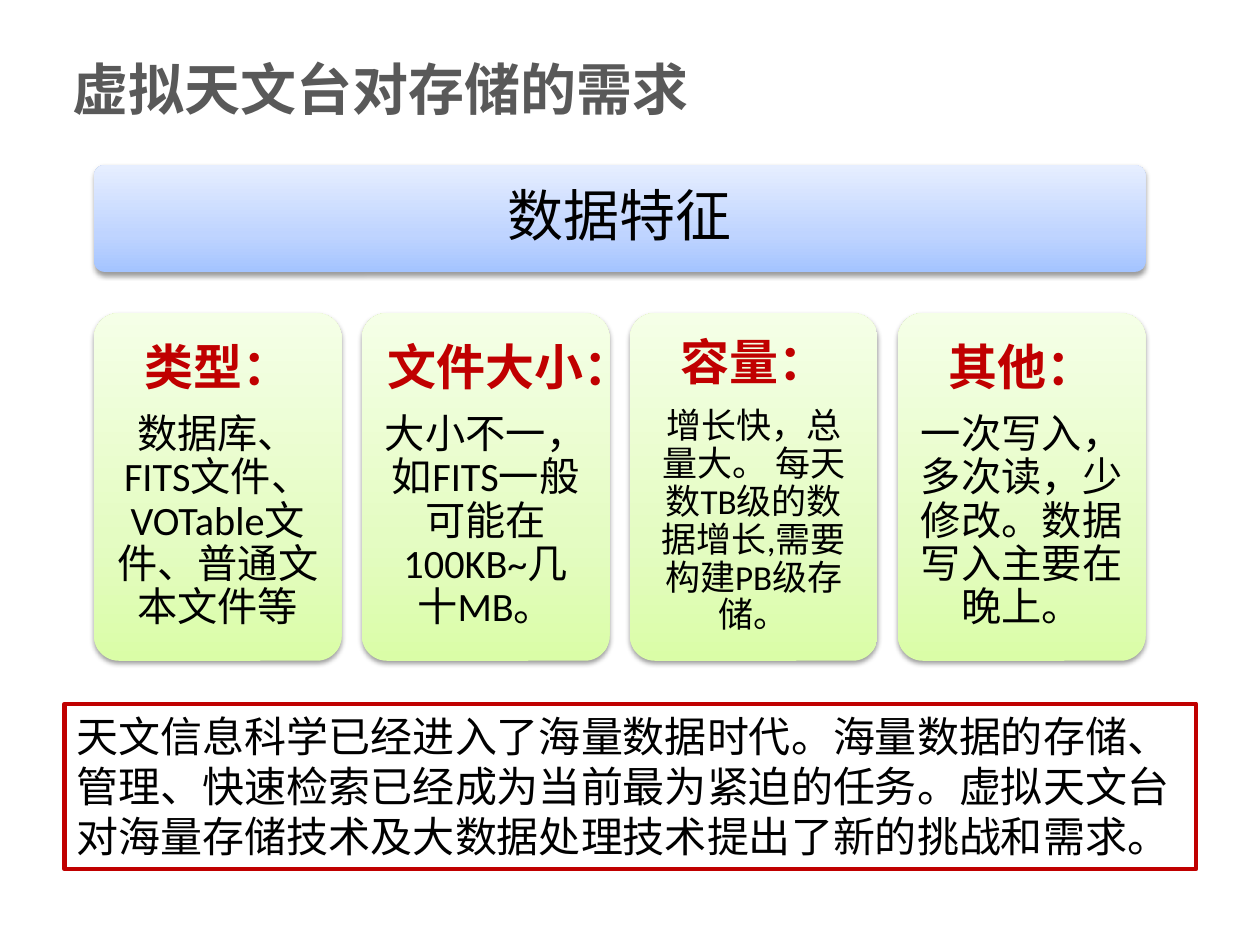
from copy import deepcopy

from lxml import etree
from pptx import Presentation
from pptx.dml.color import RGBColor
from pptx.enum.shapes import MSO_SHAPE
from pptx.enum.text import MSO_ANCHOR, MSO_AUTO_SIZE, PP_ALIGN
from pptx.oxml.ns import qn
from pptx.util import Pt

ROUNDED, RECTANGLE = MSO_SHAPE.ROUNDED_RECTANGLE, MSO_SHAPE.RECTANGLE
MIDDLE, TOP = MSO_ANCHOR.MIDDLE, MSO_ANCHOR.TOP
CENTER, LEFT = PP_ALIGN.CENTER, PP_ALIGN.LEFT
FIXED = MSO_AUTO_SIZE.NONE
TITLE_ONLY = 5

BLUE = ("A4C4FF", "BFD4FF", "E6EEFF")
GREEN = ("DAFDA7", "E4FCC2", "F5FFE7")
RED, BLACK, GRAY = "C00000", "000000", "595959"

FEATURES = [
    ("类型：", "数据库、FITS文件、VOTable文件、普通文本文件等", 23),
    ("文件大小：", "大小不一，如FITS一般可能在100KB~几十MB。", 23),
    ("容量：", "增长快，总量大。 每天数TB级的数据增长,需要构建PB级存储。", 20),
    ("其他：", "一次写入，多次读，少修改。数据写入主要在晚上。", 23),
]
CONCLUSION = (
    "天文信息科学已经进入了海量数据时代。海量数据的存储、管理、快速检索已经成为当前最为紧迫的任务。"
    "虚拟天文台对海量存储技术及大数据处理技术提出了新的挑战和需求。"
)


def color(code):
    return RGBColor.from_string(code)


def assign(target, values):
    for name, value in values.items():
        setattr(target, name, value)


class StorageSlide:
    """Holds the text style and the slide, and draws each kind of element."""

    font = "Calibri"

    def __init__(self, deck):
        self.slide = deck.slides.add_slide(deck.slide_layouts[TITLE_ONLY])

    def add_text(self, paragraph, text, size, shade, bold=False, font=None):
        run = paragraph.add_run()
        run.text = text
        assign(run.font, {"size": Pt(size), "bold": bold, "name": font or self.font})
        run.font.color.rgb = color(shade)

    def title(self, text, left, top, width, height):
        heading = self.slide.shapes.title
        assign(heading, {"left": Pt(left), "top": Pt(top),
                         "width": Pt(width), "height": Pt(height)})
        frame = heading.text_frame
        assign(frame, {"auto_size": FIXED, "word_wrap": True, "vertical_anchor": MIDDLE})
        frame.paragraphs[0].alignment = LEFT
        self.add_text(frame.paragraphs[0], text, 32, GRAY, True, "Noto Sans CJK SC")

    def shape(self, kind, left, top, width, height):
        box = self.slide.shapes.add_shape(kind, Pt(left), Pt(top), Pt(width), Pt(height))
        box.shadow.inherit = False
        box.text_frame.word_wrap = True
        return box

    def gradient(self, box, shades):
        box.fill.gradient()
        box.fill.gradient_angle = 90
        stops = box.element.spPr.find(".//" + qn("a:gsLst"))
        stops.insert(1, deepcopy(stops[0]))
        for stop, shade, position in zip(box.fill.gradient_stops, shades, (0, 0.35, 1)):
            stop.color.rgb = color(shade)
            stop.position = position

    def shadow(self, box):
        effects = box.element.spPr.find(qn("a:effectLst"))
        outer = etree.SubElement(effects, qn("a:outerShdw"), blurRad=str(Pt(3.1)),
                                 dist=str(Pt(1.6)), dir="5400000", rotWithShape="0")
        black = etree.SubElement(outer, qn("a:srgbClr"), val=BLACK)
        etree.SubElement(black, qn("a:alpha"), val="38000")

    def card(self, place, shades, inset, lines):
        box = self.shape(ROUNDED, *place)
        box.adjustments[0] = 0.1
        self.gradient(box, shades)
        box.line.fill.background()
        self.shadow(box)
        frame = box.text_frame
        frame.vertical_anchor = MIDDLE
        assign(frame, {f"margin_{side}": Pt(inset)
                       for side in ("left", "top", "right", "bottom")})
        for index, (text, size, shade, bold) in enumerate(lines):
            paragraph = frame.add_paragraph() if index else frame.paragraphs[0]
            assign(paragraph, {"alignment": CENTER, "line_spacing": 0.9,
                               "space_after": Pt(0.35 * size)})
            self.add_text(paragraph, text, size, shade, bold)

    def outlined(self, place, text):
        box = self.shape(RECTANGLE, *place)
        box.fill.background()
        box.line.color.rgb = color(RED)
        box.line.width = Pt(2.5)
        box.text_frame.vertical_anchor = TOP
        paragraph = box.text_frame.paragraphs[0]
        paragraph.alignment = LEFT
        self.add_text(paragraph, text, 24, BLACK, font="Arial")


def main():
    deck = Presentation()
    deck.slide_width, deck.slide_height = Pt(720), Pt(540)
    page = StorageSlide(deck)
    page.title("虚拟天文台对存储的需求", 34, 28, 400, 44.6)

    left, width, card_width = 53.8, 600.8, 141.4
    page.card((left, 94.4, width, 61), BLUE, 9.4, [("数据特征", 32, BLACK, False)])
    step = (width - card_width) / (len(FEATURES) - 1)
    for index, (heading, detail, size) in enumerate(FEATURES):
        page.card((left + index * step, 179, card_width, 198.6), GREEN, 8.6,
                  [(heading, 28, RED, True), (detail, size, BLACK, False)])

    page.outlined((36.9, 402.2, 646.6, 94.5), CONCLUSION)
    deck.save("out.pptx")


if __name__ == "__main__":
    main()
